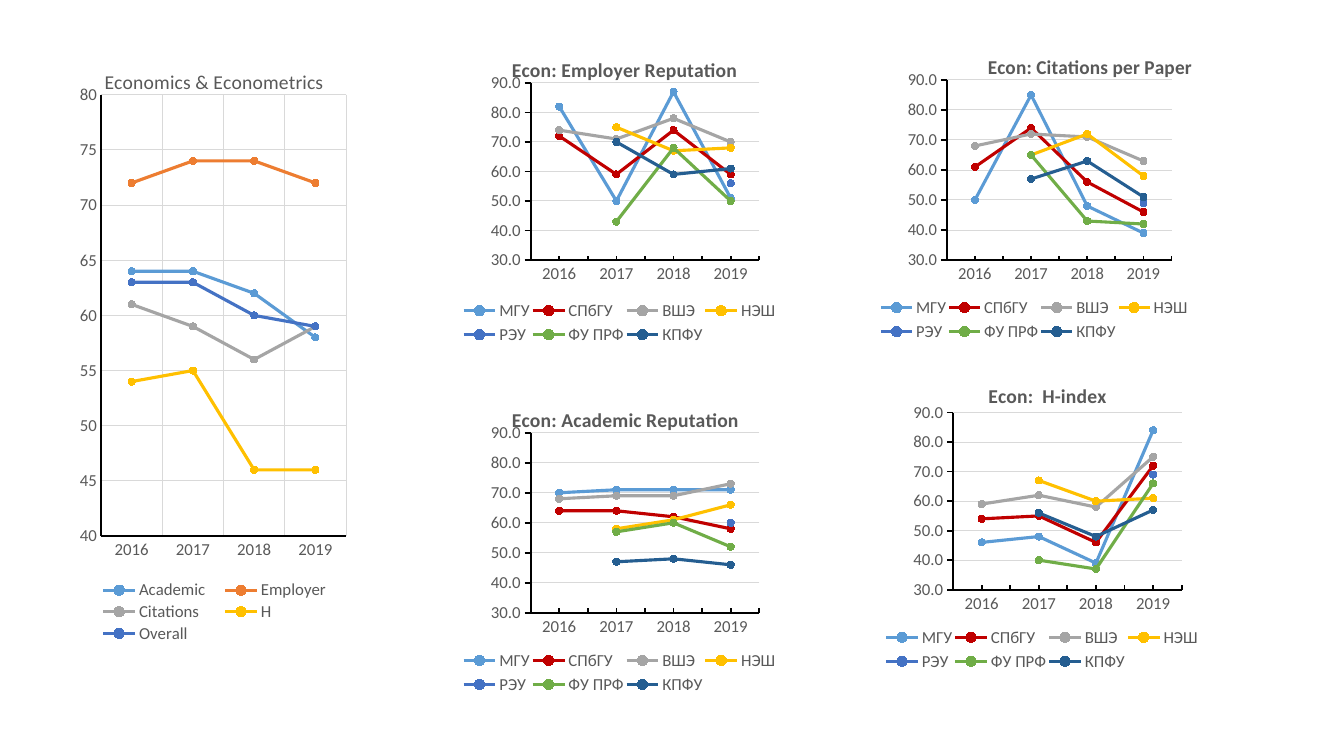
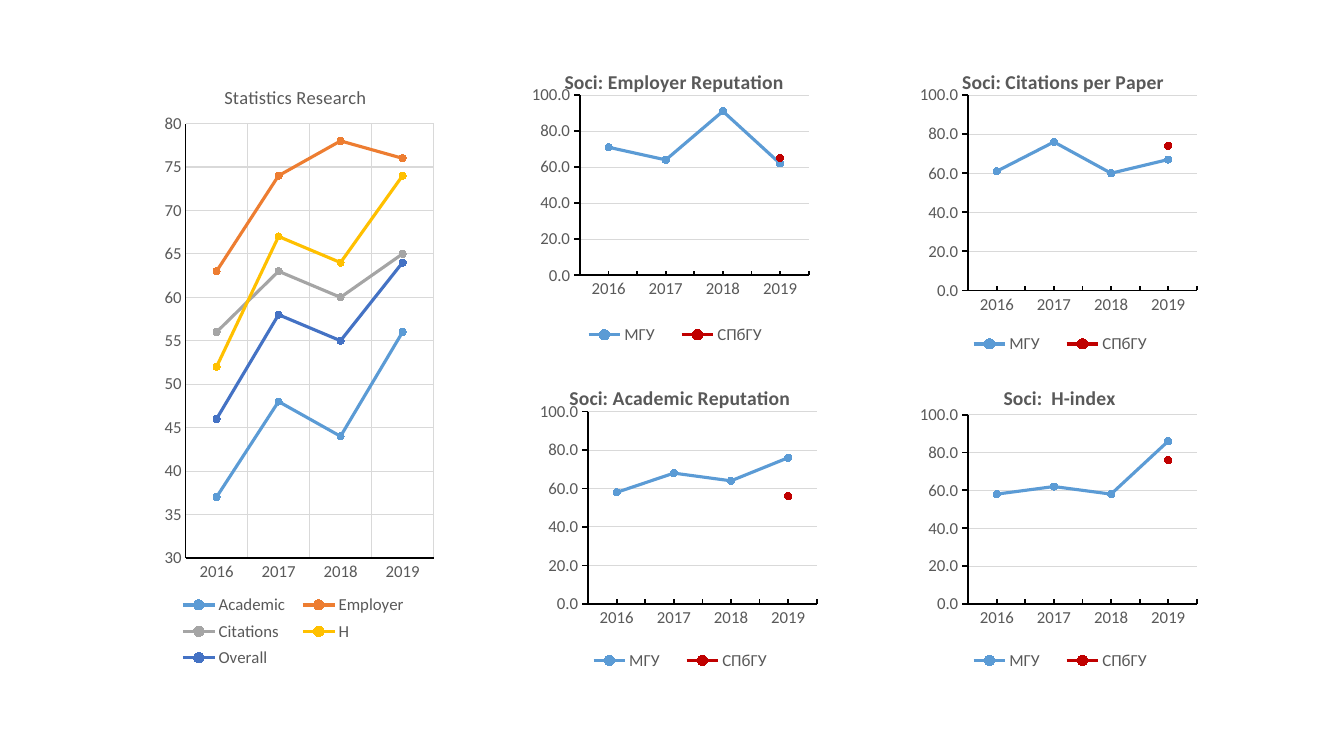
"""Build two slides of line charts on subject rankings for 2016 to 2019."""
from lxml.etree import SubElement
from pptx import Presentation
from pptx.chart.data import CategoryChartData
from pptx.dml.color import RGBColor
from pptx.enum.chart import XL_CHART_TYPE, XL_LEGEND_POSITION, XL_MARKER_STYLE, XL_TICK_MARK
from pptx.oxml.ns import qn
from pptx.util import Inches, Pt

YEARS = ["2016", "2017", "2018", "2019"]
COLOURS = {
    "axis": "000000", "grid": "D9D9D9", "text": "595959",
    "Academic": "5B9BD5", "Employer": "ED7D31", "Citations": "A5A5A5",
    "H": "FFC000", "Overall": "4472C4",
    "МГУ": "5B9BD5", "СПбГУ": "C00000", "ВШЭ": "A5A5A5", "НЭШ": "FFC000",
    "РЭУ": "4472C4", "ФУ ПРФ": "70AD47", "КПФУ": "255E91",
}
INDICATORS = ["Academic", "Employer", "Citations", "H", "Overall"]
UNIVERSITIES = ["МГУ", "СПбГУ", "ВШЭ", "НЭШ", "РЭУ", "ФУ ПРФ", "КПФУ"]

OVERVIEW = {
    "size": (2.93, 6), "names": INDICATORS, "upright_grid": True, "format": "General",
    "legend_side": XL_LEGEND_POSITION.RIGHT,
    "value_tick": XL_TICK_MARK.NONE, "year_tick": XL_TICK_MARK.NONE,
    "title_font": {"bold": False},
}
DETAIL = {
    "size": (3.15, 3.03), "names": UNIVERSITIES, "upright_grid": False, "format": "0.0",
    "legend_side": XL_LEGEND_POSITION.BOTTOM,
    "value_tick": XL_TICK_MARK.OUTSIDE, "year_tick": XL_TICK_MARK.INSIDE,
    "title_font": {"bold": True, "size": Pt(14)},
}
ECON_SCALE = {"minimum_scale": 30, "maximum_scale": 90, "major_unit": 10}
SOCI_SCALE = {"minimum_scale": 0, "maximum_scale": 100, "major_unit": 20}

ECON_OVERVIEW = {
    "at": (0.65, 0.46), "title": "Economics & Econometrics", "title_at": (0.12, 0.03),
    "title_font": {"bold": False, "size": Pt(14)},
    "plot": (0.12, 0.08, 0.83, 0.73), "legend": (0.08, 0.88, 0.85, 0.11),
    "scale": {"minimum_scale": 40, "maximum_scale": 80, "major_unit": 5},
    "rows": [[64, 64, 62, 58], [72, 74, 74, 72], [61, 59, 56, 59],
             [54, 55, 46, 46], [63, 63, 60, 59]],
}
STATISTICS_OVERVIEW = {
    "at": (1.43, 0.68), "size": (2.93, 6.07),
    "title": "Statistics Research", "title_at": (0.26, 0.02),
    "title_font": {"bold": False, "size": Pt(13.2)},
    "plot": (0.14, 0.09, 0.84, 0.71), "legend": (0.09, 0.85, 0.83, 0.14),
    "scale": {"minimum_scale": 30, "maximum_scale": 80, "major_unit": 5},
    "rows": [[37, 48, 44, 56], [63, 74, 78, 76], [56, 63, 60, 65],
             [52, 67, 64, 74], [46, 58, 55, 64]],
}
ECON_DETAILS = [
    {"at": (4.57, 3.93), "title": "Econ: Academic Reputation", "title_at": (0.15, 0.02),
     "plot": (0.22, 0.12, 0.72, 0.59),
     "rows": [[70, 71, 71, 71], [64, 64, 62, 58], [68, 69, 69, 73], [58, 61, 66],
              [60], [57, 60, 52], [47, 48, 46]]},
    {"at": (4.57, 0.46), "title": "Econ: Employer Reputation", "title_at": (0.15, 0.02),
     "plot": (0.22, 0.12, 0.72, 0.58),
     "rows": [[82, 50, 87, 51], [72, 59, 74, 59], [74, 71, 78, 70], [75, 67, 68],
              [56], [43, 68, 50], [70, 59, 61]]},
    {"at": (8.71, 0.43), "title": "Econ: Citations per Paper", "title_at": (0.34, 0.02),
     "plot": (0.22, 0.12, 0.72, 0.59),
     "rows": [[50, 85, 48, 39], [61, 74, 56, 46], [68, 72, 71, 63], [65, 72, 58],
              [49], [65, 43, 42], [57, 63, 51]]},
    {"at": (8.76, 3.7), "title": "Econ:  H-index", "title_at": (0.32, 0.02),
     "plot": (0.22, 0.13, 0.72, 0.58),
     "rows": [[46, 48, 39, 84], [54, 55, 46, 72], [59, 62, 58, 75], [67, 60, 61],
              [69], [40, 37, 66], [56, 48, 57]]},
]
SOCI_DETAILS = [
    {"at": (5.14, 3.72), "title": "Soci: Academic Reputation", "title_at": (0.15, 0.02),
     "plot": (0.22, 0.12, 0.72, 0.63), "legend": (0.17, 0.89, 0.68, 0.09),
     "rows": [[58, 68, 64, 76], [56]]},
    {"at": (5.06, 0.58), "title": "Soci: Employer Reputation", "title_at": (0.16, 0.02),
     "plot": (0.22, 0.12, 0.72, 0.59), "legend": (0.18, 0.86, 0.68, 0.09),
     "rows": [[71, 64, 91, 62], [65]]},
    {"at": (8.91, 0.58), "title": "Soci: Citations per Paper", "title_at": (0.19, 0.02),
     "plot": (0.22, 0.12, 0.72, 0.64), "legend": (0.17, 0.89, 0.68, 0.09),
     "rows": [[61, 76, 60, 67], [74]]},
    {"at": (8.91, 3.72), "title": "Soci:  H-index", "title_at": (0.32, 0.02),
     "plot": (0.22, 0.13, 0.72, 0.62), "legend": (0.17, 0.89, 0.68, 0.09),
     "rows": [[58, 62, 58, 86], [76]]},
]


def apply(target, values):
    for name, value in values.items():
        setattr(target, name, value)


def colour(name):
    return RGBColor.from_string(COLOURS[name])


def style_font(font, **values):
    apply(font, {"name": "Calibri", "size": Pt(12), **values})
    font.color.rgb = colour("text")


def style_line(line, name, width):
    line.color.rgb = colour(name)
    line.width = Pt(width)


def place(part, index, fractions, inner=False):
    for old in part.findall(qn("c:layout")):
        part.remove(old)
    layout = SubElement(part, qn("c:layout"))
    part.insert(index, layout)
    manual = SubElement(layout, qn("c:manualLayout"))
    settings = [("layoutTarget", "inner")] if inner else []
    settings += [("xMode", "edge"), ("yMode", "edge")]
    settings += zip("xywh", fractions)
    for tag, value in settings:
        SubElement(manual, qn(f"c:{tag}")).set("val", str(value))


def add_title(chart, look):
    chart.has_title = True
    heading = chart.chart_title.text_frame.paragraphs[0].add_run()
    heading.text = look["title"]
    style_font(heading.font, **look["title_font"])


def style_axes(chart, look):
    years, scores = chart.category_axis, chart.value_axis
    apply(years, {"major_tick_mark": XL_TICK_MARK.NONE, "minor_tick_mark": look["year_tick"],
                  "has_major_gridlines": look["upright_grid"]})
    apply(scores, {"major_tick_mark": look["value_tick"], "minor_tick_mark": XL_TICK_MARK.NONE,
                   "has_major_gridlines": True, **look["scale"]})
    apply(scores.tick_labels, {"number_format": look["format"], "number_format_is_linked": False})
    for axis in (years, scores):
        style_font(axis.tick_labels.font)
        style_line(axis.format.line, "axis", 1.25)
        if axis.has_major_gridlines:
            style_line(axis.major_gridlines.format.line, "grid", 0.75)


def style_series(series):
    series.smooth = False
    style_line(series.format.line, series.name, 2.25)
    apply(series.marker, {"style": XL_MARKER_STYLE.CIRCLE, "size": 5})
    series.marker.format.fill.solid()
    series.marker.format.fill.fore_color.rgb = colour(series.name)
    style_line(series.marker.format.line, series.name, 0.75)


def add_line_chart(slide, *styles):
    look = {}
    for style in styles:
        look.update(style)
    scores = CategoryChartData()
    scores.categories = YEARS
    for name, row in zip(look["names"], look["rows"]):
        scores.add_series(name, [None] * (len(YEARS) - len(row)) + row)
    frame = [Inches(length) for length in look["at"] + look["size"]]
    chart = slide.shapes.add_chart(XL_CHART_TYPE.LINE_MARKERS, *frame, scores).chart
    style_font(chart.font)
    add_title(chart, look)
    style_axes(chart, look)
    chart.plots[0].vary_by_categories = False
    for series in chart.plots[0].series:
        style_series(series)
    chart.has_legend = True
    apply(chart.legend, {"position": look["legend_side"], "include_in_layout": False})
    style_font(chart.legend.font)
    body = chart.element.find(qn("c:chart"))
    place(body.find(qn("c:title")), 1, look["title_at"])
    place(body.find(qn("c:plotArea")), 0, look["plot"], inner=True)
    place(body.find(qn("c:legend")), 1, look["legend"])


def add_ranking_slide(deck, overview, details, shared):
    slide = deck.slides.add_slide(deck.slide_layouts[6])
    add_line_chart(slide, OVERVIEW, overview)
    for detail in details:
        add_line_chart(slide, DETAIL, shared, detail)


def main():
    deck = Presentation()
    apply(deck, {"slide_width": Inches(13.33), "slide_height": Inches(7.5)})
    econ_shared = {"scale": ECON_SCALE, "legend": (0, 0.82, 1, 0.17)}
    add_ranking_slide(deck, ECON_OVERVIEW, ECON_DETAILS, econ_shared)
    add_ranking_slide(deck, STATISTICS_OVERVIEW, SOCI_DETAILS, {"scale": SOCI_SCALE})
    deck.save("out.pptx")


if __name__ == "__main__":
    main()
